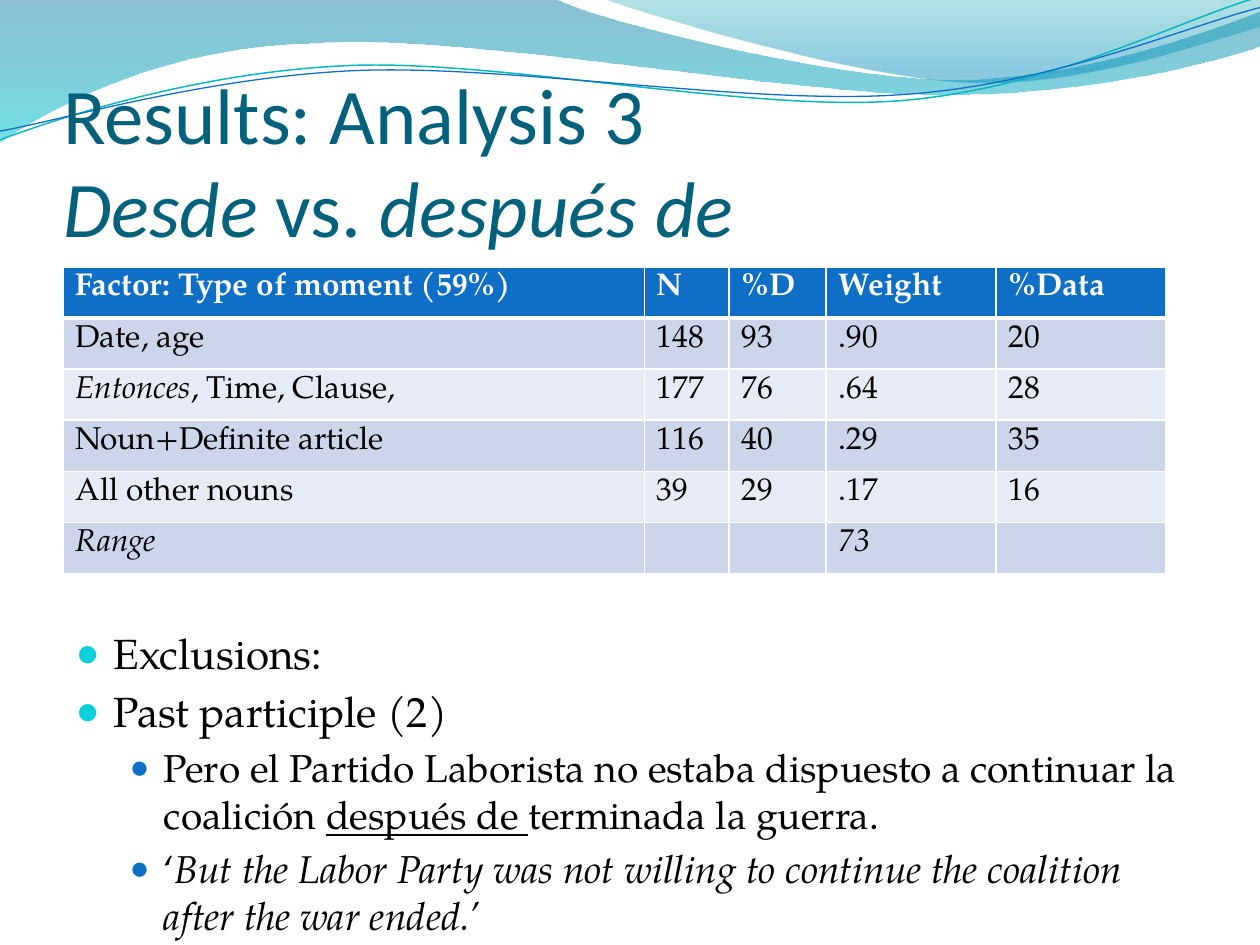
import math
from dataclasses import dataclass

import lxml.etree
import pptx
import pptx.dml.color
import pptx.enum.text
import pptx.oxml.ns
import pptx.util

Cm = pptx.util.Cm
Pt = pptx.util.Pt
qn = pptx.oxml.ns.qn

COLORS = {
    "title": "04617B", "text": "000000", "white": "FFFFFF", "blue": "0F6FC6",
    "teal": "0AB8BF", "bullet": "0BD0D9", "band_dark": "CCD5EA", "band_light": "E7EBF5",
    "wave_top": "0074A1", "wave_bottom": "00C6CF", "crest_top": "00A1A9", "crest_bottom": "008BBF",
}
SERIF = "TeX Gyre Pagella"
SANS = "Calibri"
UNIT = 2.54  # wave coordinates are in inches
PIVOT = (4.99, 0.58)
TILT = -2.7


@dataclass
class Stop:
    position: float
    color: str
    opacity: int


@dataclass
class Wave:
    """Steps hold two numbers for a straight line, six for a cubic curve."""
    start: tuple
    steps: list
    stops: tuple = ()
    line: str = ""
    width: float = 0
    tilt: float = 0


@dataclass
class Span:
    text: str
    italic: bool = False
    underline: bool = False


@dataclass
class Level:
    size: float
    line_height: float
    margin: float
    indent: float
    bullet_color: str
    bullet_percent: int


WAVES = [
    Wave((0, 0), [
        (4.4, -0.01), (4.76, 0.17, 6.64, 0.63, 7.58, 0.63), (8.53, 0.63, 9.58, 0.26, 10, 0.09),
        (10.01, 0.36), (9.83, 0.44, 8.7, 0.76, 7.46, 0.75), (6.22, 0.75, 3.82, 0.28, 2.57, 0.34),
        (1.29, 0.36, 0.46, 0.83, -0.01, 1.13)],
        stops=(Stop(0, "wave_top", 45), Stop(1, "wave_bottom", 55))),
    Wave((4.79, -0.01), [
        (5.09, 0.11, 6.82, 0.62, 7.69, 0.65), (8.56, 0.69, 9.61, 0.32, 10, 0.21), (10, 0)],
        stops=(Stop(0, "crest_top", 30), Stop(0.8, "crest_bottom", 45))),
    Wave((0, 1.11), [
        (0.48, 0.93, 1.58, 0.57, 2.77, 0.52), (3.95, 0.47, 5.93, 0.89, 7.13, 0.8),
        (8.33, 0.71, 9.38, 0.15, 9.98, -0.02)], line="teal", width=0.85, tilt=TILT),
    Wave((0, 1.04), [
        (0.47, 0.96, 1.64, 0.61, 2.83, 0.56), (4.03, 0.51, 5.97, 0.84, 7.17, 0.75),
        (8.36, 0.67, 9.41, 0.21, 10, 0.06)], line="blue", width=0.75, tilt=TILT),
]

TITLE = [Span("Results: Analysis 3\v"), Span("Desde", italic=True), Span(" vs. "),
         Span("después de", italic=True)]

COLUMN_WIDTHS = [11.72, 1.71, 1.95, 3.43, 3.42]
ROW_HEIGHT = 1.03
ROWS = [
    ["Factor: Type of moment (59%)", "N", "%D", "Weight", "%Data"],
    ["Date, age", "148", "93", ".90", "20"],
    [[Span("Entonces", italic=True), Span(", Time, Clause,")], "177", "76", ".64", "28"],
    ["Noun+Definite article", "116", "40", ".29", "35"],
    ["All other nouns", "39", "29", ".17", "16"],
    [[Span("Range", italic=True)], "", "", [Span("73", italic=True)], ""],
]
HEADER_BORDERS = {"a:lnL": 1, "a:lnR": 1, "a:lnT": 1, "a:lnB": 3}

LEVELS = [Level(24.1, 28.5, 0.76, -0.76, "bullet", 95),
          Level(22.2, 26.6, 1.78, -0.69, "blue", 85)]
ITEMS = [
    (0, [Span("Exclusions:")]),
    (0, [Span("Past participle (2)")]),
    (1, [Span("Pero el Partido Laborista no estaba dispuesto a continuar la coalición "),
         Span("después de ", underline=True), Span("terminada la guerra. ")]),
    (1, [Span("‘"), Span("But the Labor Party was not willing to continue the coalition "
                         "after the war ended.’", italic=True)]),
]


def rgb(name: str) -> pptx.dml.color.RGBColor:
    return pptx.dml.color.RGBColor.from_string(COLORS[name])


def write(para, text, *, size: float, font: str = SERIF, color: str = "text",
          bold: bool = False) -> None:
    """Add a string or a list of spans to a paragraph."""
    for part in [Span(text)] if isinstance(text, str) else text:
        span = para.add_run()
        span.text = part.text.rstrip("\v")
        span.font.name, span.font.size = font, Pt(size)
        span.font.color.rgb = rgb(color)
        span.font.bold, span.font.italic = bold, part.italic
        span.font.underline = part.underline
        if part.text.endswith("\v"):
            para.add_line_break()


def level_point(x: float, y: float, tilt: float) -> tuple:
    """Turn a point back about the pivot, since the shape itself is rotated."""
    angle = math.radians(-tilt)
    dx, dy = x - PIVOT[0], y - PIVOT[1]
    flat_x = PIVOT[0] + dx * math.cos(angle) - dy * math.sin(angle)
    flat_y = PIVOT[1] + dx * math.sin(angle) + dy * math.cos(angle)
    return Cm(flat_x * UNIT), Cm(flat_y * UNIT)


def bend(shape, steps: list) -> None:
    """Join each three line segments that stand for a curve into one cubic curve."""
    segments = iter(list(shape.element.iter(qn("a:lnTo"))))
    for step in steps:
        first = next(segments)
        if len(step) == 6:
            curve = lxml.etree.Element(qn("a:cubicBezTo"))
            first.addprevious(curve)
            for segment in (first, next(segments), next(segments)):
                curve.append(segment[0])
                segment.getparent().remove(segment)


def draw_wave(page, wave: Wave) -> None:
    points = [level_point(*step[index:index + 2], wave.tilt)
              for step in [wave.start, *wave.steps] for index in range(0, len(step), 2)]
    builder = page.shapes.build_freeform(*points[0])
    builder.add_line_segments(points[1:], close=bool(wave.stops))
    shape = builder.convert_to_shape()
    bend(shape, wave.steps)
    shape.rotation = wave.tilt % 360
    shape.shadow.inherit = False
    if wave.line:
        shape.fill.background()
        shape.line.color.rgb = rgb(wave.line)
        shape.line.width = Pt(wave.width)
        return
    shape.line.fill.background()
    shape.fill.gradient()
    shape.fill.gradient_angle = 270
    for target, stop in zip(shape.fill.gradient_stops, wave.stops):
        target.position = stop.position
        target.color.rgb = rgb(stop.color)
    for color, stop in zip(shape.element.spPr.iter(qn("a:srgbClr")), wave.stops):
        lxml.etree.SubElement(color, qn("a:alpha"), val=str(stop.opacity * 1000))


def place(box, left: float, top: float, width: float, height: float) -> None:
    box.left, box.top, box.width, box.height = Cm(left), Cm(top), Cm(width), Cm(height)
    box.text_frame.word_wrap = True
    box.text_frame.auto_size = pptx.enum.text.MSO_AUTO_SIZE.NONE


def fill_title(box) -> None:
    place(box, 1.27, 2, 22.86, 3.17)
    frame = box.text_frame
    frame.margin_left = frame.margin_right = frame.margin_bottom = 0
    frame.vertical_anchor = pptx.enum.text.MSO_ANCHOR.BOTTOM
    para = frame.paragraphs[0]
    para.alignment = pptx.enum.text.PP_ALIGN.LEFT
    para.line_spacing = 0.99
    write(para, TITLE, size=45, font=SANS, color="title")


def set_bullet(para, level: Level) -> None:
    props = para._p.get_or_add_pPr()
    props.set("marL", str(Cm(level.margin)))
    props.set("indent", str(Cm(level.indent)))
    color = lxml.etree.SubElement(props, qn("a:buClr"))
    lxml.etree.SubElement(color, qn("a:srgbClr"), val=COLORS[level.bullet_color])
    lxml.etree.SubElement(props, qn("a:buSzPct"), val=str(level.bullet_percent * 1000))
    lxml.etree.SubElement(props, qn("a:buChar"), char="●")


def fill_body(box) -> None:
    place(box, 1.27, 5.38, 22.86, 12.19)
    frame = box.text_frame
    frame.vertical_anchor = pptx.enum.text.MSO_ANCHOR.TOP
    frame.margin_top = Cm(7.28)  # leaves room for the table
    for index, (depth, text) in enumerate(ITEMS):
        para = frame.add_paragraph() if index else frame.paragraphs[0]
        level = LEVELS[depth]
        para.level = depth
        para.line_spacing = Pt(level.line_height)
        para.space_before = Pt(0.2 * level.size if index else 0)
        set_bullet(para, level)
        write(para, text, size=level.size)


def add_header_borders(cell) -> None:
    props = cell._tc.get_or_add_tcPr()
    for index, (side, width) in enumerate(HEADER_BORDERS.items()):
        line = lxml.etree.Element(qn(side), w=str(Pt(width)))
        fill = lxml.etree.SubElement(line, qn("a:solidFill"))
        lxml.etree.SubElement(fill, qn("a:srgbClr"), val=COLORS["white"])
        props.insert(index, line)


def draw_table(page) -> None:
    table = page.shapes.add_table(len(ROWS), len(COLUMN_WIDTHS), Cm(1.27), Cm(5.38),
                                  Cm(sum(COLUMN_WIDTHS)), Cm(ROW_HEIGHT * len(ROWS))).table
    for column, width in zip(table.columns, COLUMN_WIDTHS):
        column.width = Cm(width)
    for index, values in enumerate(ROWS):
        header = index == 0
        band = "blue" if header else "band_dark" if index % 2 else "band_light"
        for cell, value in zip(table.rows[index].cells, values):
            cell.fill.solid()
            cell.fill.fore_color.rgb = rgb(band)
            if header:
                add_header_borders(cell)
            if value:
                write(cell.text_frame.paragraphs[0], value, size=18,
                      color="white" if header else "text", bold=header)


def main() -> None:
    deck = pptx.Presentation()
    deck.slide_width, deck.slide_height = Cm(25.4), Cm(19.05)
    page = deck.slides.add_slide(deck.slide_layouts[1])
    title, body = page.placeholders
    for wave in WAVES:
        draw_wave(page, wave)
    for box in (title, body):  # bring the text in front of the waves
        page.shapes.element.append(box.element)
    fill_title(title)
    fill_body(body)
    draw_table(page)
    deck.save("out.pptx")


if __name__ == "__main__":
    main()
